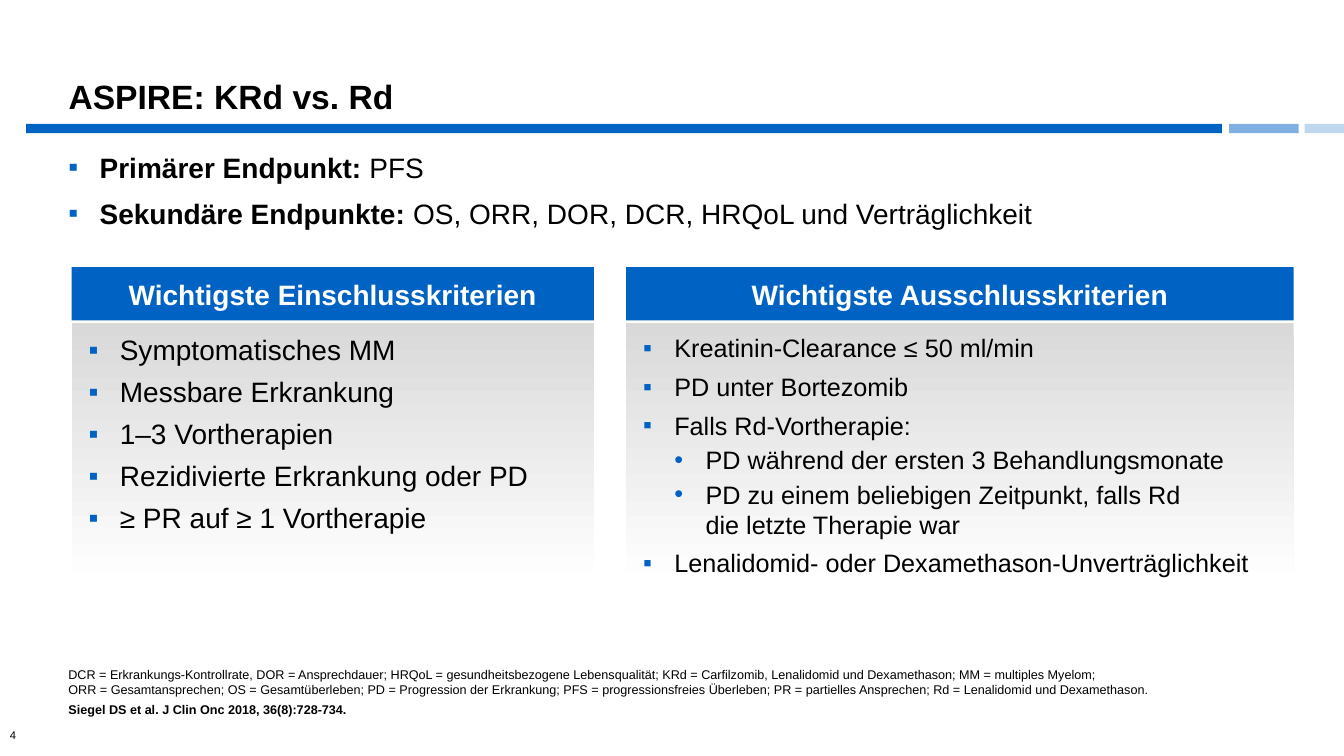
from lxml import etree
from pptx import Presentation
from pptx import util as u
from pptx.dml import color
from pptx.enum import shapes, text
from pptx.oxml import ns

COLORS = {"blue": "0063C3", "black": "000000", "white": "FFFFFF", "gray": "D9D9D9"}
BULLETS = {0: "▪", 1: "•"}
HANGING = 0.31
BODY_INSETS = (0.1, 0.05, 0.1, 0.05)
PANEL_INSETS = (0.1, 0.1, 0.1, 0.05)
HEADING_INSETS = (0.1, 0.1, 0.1, 0.1)
PANEL_TOP = 2.65
HEADING_HEIGHT = 0.53
PANEL_GAP = 0.02
CRITERIA_HEIGHT = 2.6

ENDPOINTS = [
    ("Primärer Endpunkt:", " PFS"),
    ("Sekundäre Endpunkte:", " OS, ORR, DOR, DCR, HRQoL und Verträglichkeit"),
]
INCLUSION = [
    (0, "Symptomatisches MM"),
    (0, "Messbare Erkrankung"),
    (0, "1–3 Vortherapien"),
    (0, "Rezidivierte Erkrankung oder PD"),
    (0, "≥ PR auf ≥ 1 Vortherapie"),
]
EXCLUSION = [
    (0, "Kreatinin-Clearance ≤ 50 ml/min"),
    (0, "PD unter Bortezomib"),
    (0, "Falls Rd-Vortherapie:"),
    (1, "PD während der ersten 3 Behandlungsmonate"),
    (1, "PD zu einem beliebigen Zeitpunkt, falls Rd\ndie letzte Therapie war"),
    (0, "Lenalidomid- oder Dexamethason-Unverträglichkeit"),
]
ABBREVIATIONS = (
    "DCR = Erkrankungs-Kontrollrate, DOR = Ansprechdauer; "
    "HRQoL = gesundheitsbezogene Lebensqualität; "
    "KRd = Carfilzomib, Lenalidomid und Dexamethason; MM = multiples Myelom;\n"
    "ORR = Gesamtansprechen; OS = Gesamtüberleben; PD = Progression der Erkrankung; "
    "PFS = progressionsfreies Überleben; PR = partielles Ansprechen; "
    "Rd = Lenalidomid und Dexamethason."
)
CITATION = "Siegel DS et al. J Clin Onc 2018, 36(8):728-734."


def rgb(name):
    return color.RGBColor.from_string(COLORS[name])


def apply(target, values):
    for attribute, value in values.items():
        setattr(target, attribute, value)


def inches(box):
    return [u.Inches(length) for length in box]


def set_frame(frame, insets=BODY_INSETS, anchor=text.MSO_ANCHOR.TOP):
    left, top, right, bottom = inches(insets)
    apply(frame, {
        "word_wrap": True, "auto_size": text.MSO_AUTO_SIZE.NONE,
        "vertical_anchor": anchor, "margin_left": left, "margin_top": top,
        "margin_right": right, "margin_bottom": bottom,
    })
    return frame


def next_paragraph(frame, space_before=0):
    first = frame.paragraphs[0]
    if not first.runs:
        first.space_before = u.Pt(0)
        return first
    paragraph = frame.add_paragraph()
    paragraph.space_before = u.Pt(space_before)
    return paragraph


def write(paragraph, words, size, bold=False, ink="black"):
    for index, line in enumerate(words.split("\n")):
        if index:
            paragraph.add_line_break()
        run = paragraph.add_run()
        run.text = line
        apply(run.font, {"name": "Arial", "size": u.Pt(size), "bold": bold})
        run.font.color.rgb = rgb(ink)


def add_bullet(paragraph, level, indent):
    paragraph.level = level
    paragraph.alignment = text.PP_ALIGN.LEFT
    properties = paragraph._p.get_or_add_pPr()
    properties.set("marL", str(u.Inches(indent)))
    properties.set("indent", str(-u.Inches(HANGING)))
    tint = etree.SubElement(properties, ns.qn("a:buClr"))
    etree.SubElement(tint, ns.qn("a:srgbClr"), val=COLORS["blue"])
    etree.SubElement(properties, ns.qn("a:buFont"), typeface="Arial")
    etree.SubElement(properties, ns.qn("a:buChar"), char=BULLETS[level])


def add_rectangle(slide, box, fill="blue"):
    rectangle = slide.shapes.add_shape(shapes.MSO_SHAPE.RECTANGLE, *inches(box))
    rectangle.shadow.inherit = False
    rectangle.line.fill.background()
    rectangle.fill.solid()
    rectangle.fill.fore_color.rgb = rgb(fill)
    return rectangle


def add_text_area(slide, box, anchor=text.MSO_ANCHOR.TOP):
    area = slide.shapes.add_textbox(*inches(box))
    return set_frame(area.text_frame, anchor=anchor)


def add_page_number(slide, box):
    write(next_paragraph(add_text_area(slide, box)), "4", 8)


def add_rule(slide, top, height):
    for left, width, opacity in ((0.26, 11.86, 100), (12.19, 0.69, 50), (12.94, 0.39, 25)):
        segment = add_rectangle(slide, (left, top, width, height))
        if opacity < 100:
            tint = segment.fill._xPr.find(".//" + ns.qn("a:srgbClr"))
            etree.SubElement(tint, ns.qn("a:alpha"), val=str(opacity * 1000))


def add_title(slide, box):
    title = slide.shapes.title
    apply(title, dict(zip(("left", "top", "width", "height"), inches(box))))
    frame = set_frame(title.text_frame, anchor=text.MSO_ANCHOR.BOTTOM)
    heading = next_paragraph(frame)
    apply(heading, {"alignment": text.PP_ALIGN.LEFT, "line_spacing": 0.9})
    write(heading, "ASPIRE: KRd vs. Rd", 24, bold=True)


def add_endpoints(slide, box):
    frame = add_text_area(slide, box)
    for label, measures in ENDPOINTS:
        endpoint = next_paragraph(frame, 9)
        add_bullet(endpoint, 0, HANGING)
        write(endpoint, label, 20, bold=True)
        write(endpoint, measures, 20)


def add_criteria_panel(slide, box, heading, criteria, size):
    left, top, width, height = box
    criteria_top = top + HEADING_HEIGHT + PANEL_GAP
    body = add_rectangle(slide, (left, criteria_top, width, height))
    body.fill.gradient()
    body.fill.gradient_angle = 270
    for stop, position, tint in zip(body.fill.gradient_stops, (0, 1), ("gray", "white")):
        stop.position = position
        stop.color.rgb = rgb(tint)
    frame = set_frame(body.text_frame, PANEL_INSETS)
    for level, criterion in criteria:
        item = next_paragraph(frame, 3 if level else 6)
        add_bullet(item, level, 0.38 + level * HANGING)
        write(item, criterion, size)

    header = add_rectangle(slide, (left, top, width, HEADING_HEIGHT))
    frame = set_frame(header.text_frame, HEADING_INSETS, text.MSO_ANCHOR.MIDDLE)
    caption = next_paragraph(frame)
    caption.alignment = text.PP_ALIGN.CENTER
    write(caption, heading, 20, bold=True, ink="white")


def add_footnotes(slide, box):
    frame = add_text_area(slide, box, text.MSO_ANCHOR.BOTTOM)
    abbreviations = next_paragraph(frame)
    abbreviations.space_after = u.Pt(3)
    write(abbreviations, ABBREVIATIONS, 9)
    write(next_paragraph(frame), CITATION, 9, bold=True)


def main():
    deck = Presentation()
    apply(deck, {"slide_width": u.Inches(13.33), "slide_height": u.Inches(7.5)})
    slide = deck.slides.add_slide(deck.slide_layouts.get_by_name("Title Only"))
    add_page_number(slide, (0, 7.18, 0.67, 0.24))
    add_rule(slide, 1.23, 0.09)
    add_title(slide, (0.58, 0, 12.25, 1.21))
    add_endpoints(slide, (0.58, 1.44, 12.25, 0.96))
    add_criteria_panel(slide, (0.71, PANEL_TOP, 5.18, CRITERIA_HEIGHT),
                       "Wichtigste Einschlusskriterien", INCLUSION, 20)
    add_criteria_panel(slide, (6.21, PANEL_TOP, 6.62, CRITERIA_HEIGHT),
                       "Wichtigste Ausschlusskriterien", EXCLUSION, 18)
    add_footnotes(slide, (0.58, 6.56, 11.05, 0.6))
    deck.save("out.pptx")


if __name__ == "__main__":
    main()
